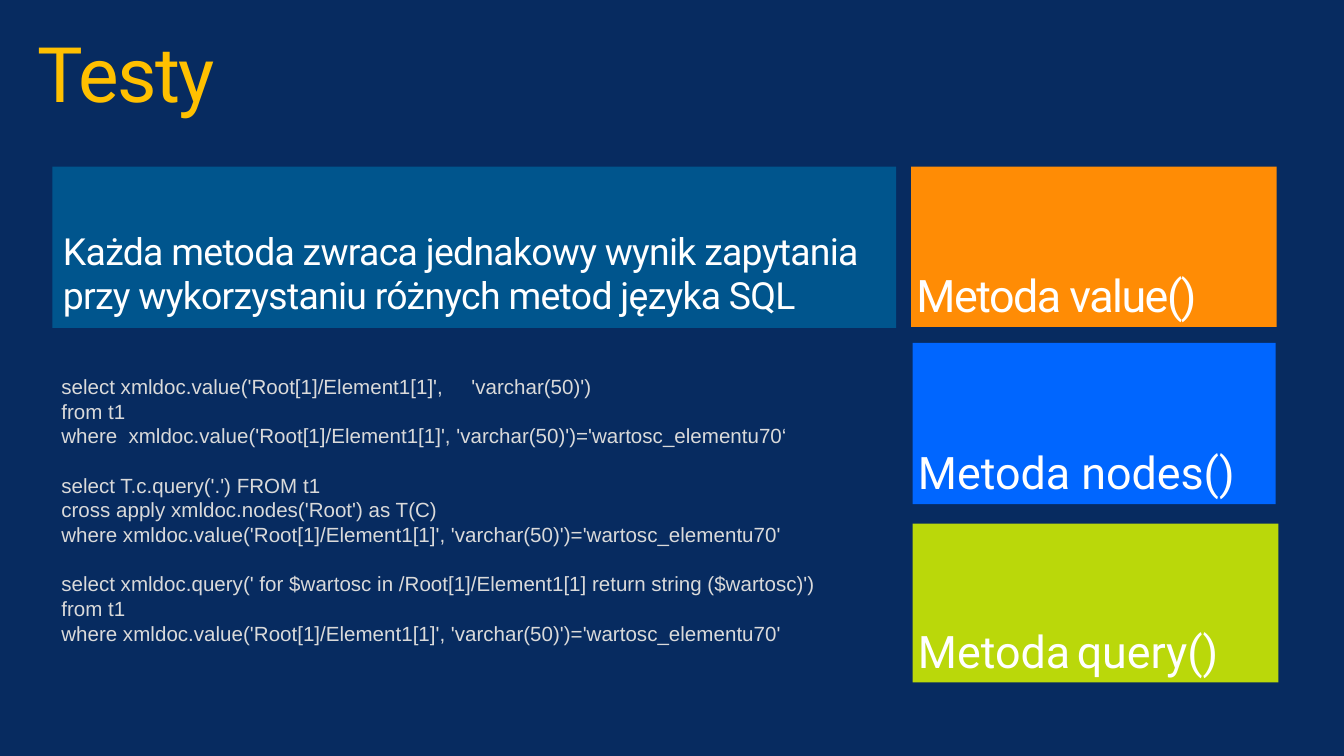
from pptx import Presentation
from pptx.dml.color import RGBColor
from pptx.enum.shapes import MSO_SHAPE
from pptx.enum.text import MSO_ANCHOR, PP_ALIGN
from pptx.oxml.ns import qn
from pptx.util import Cm, Pt
from lxml.etree import SubElement

COLORS = {
    "background": "072B60", "title": "FFC000", "text": "FFFFFF", "code": "DADADA",
    "summary": "00558D", "value": "FF8C05", "nodes": "0066FF", "query": "BAD80A",
}
TITLE = "Testy"
SUMMARY = "Każda metoda zwraca jednakowy wynik zapytania przy wykorzystaniu różnych metod języka SQL"
CONDITION = "xmldoc.value('Root[1]/Element1[1]', 'varchar(50)')='wartosc_elementu70"
QUERIES = [
    ["select xmldoc.value('Root[1]/Element1[1]',\t'varchar(50)')",
     "from t1",
     f"where\t{CONDITION}‘"],
    ["select T.c.query('.') FROM t1",
     "cross apply xmldoc.nodes('Root') as T(C)",
     f"where {CONDITION}'"],
    ["select xmldoc.query(' for $wartosc in /Root[1]/Element1[1] return string ($wartosc)')",
     "from t1",
     f"where {CONDITION}'"],
]
CODE_TABS = [[7.75], [], [1.27]]
SMALL, LARGE = 0.1, 0.2
TILES = [
    ("summary", (0.99, 3.15, 15.95, 3.05), (LARGE, SMALL, SMALL, LARGE), [(SUMMARY, 20)], -0.4),
    ("value", (17.22, 3.15, 6.91, 3.03), (SMALL,) * 4, [("Metoda value()", 24)], -0.8),
    ("nodes", (17.25, 6.48, 6.86, 3.05), (SMALL,) * 4, [("Metoda nodes()", 24)], 0),
    ("query", (17.25, 9.9, 6.91, 3), (SMALL,) * 4,
     [("Metoda", 24), (" ", 14), ("query()", 24)], 0),
]
CODE_PITCH = 13.2


def color(name):
    return RGBColor.from_string(COLORS[name])


def add_run(paragraph, words, size, tint, face="Roboto", spacing=0):
    run = paragraph.add_run()
    run.text = words
    run.font.size = Pt(size)
    run.font.name = face
    run.font.color.rgb = color(tint)
    if spacing:
        run.font._element.set("spc", str(round(spacing * 100)))


def set_frame(frame, insets, anchor):
    frame.word_wrap = True
    frame.vertical_anchor = anchor
    (frame.margin_left, frame.margin_top,
     frame.margin_right, frame.margin_bottom) = map(Cm, insets)


def add_tabs(paragraph, stops):
    tab_list = SubElement(paragraph._p.get_or_add_pPr(), qn("a:tabLst"))
    for stop in stops:
        SubElement(tab_list, qn("a:tab"), pos=str(Cm(stop)), algn="l")


def add_title(slide):
    title = slide.shapes.title
    title.left, title.top, title.width, title.height = map(Cm, (0.46, 0.48, 23.24, 1.57))
    set_frame(title.text_frame, (0.25, 0.2, 0.25, 0.13), MSO_ANCHOR.TOP)
    heading = title.text_frame.paragraphs[0]
    heading.alignment = PP_ALIGN.LEFT
    heading.line_spacing = 0.9
    add_run(heading, TITLE, 41, "title", spacing=-0.8)


def add_tile(slide, fill, place, insets, label, spacing):
    tile = slide.shapes.add_shape(MSO_SHAPE.RECTANGLE, *map(Cm, place))
    tile.shadow.inherit = False
    tile.fill.solid()
    tile.fill.fore_color.rgb = color(fill)
    tile.line.fill.background()
    set_frame(tile.text_frame, insets, MSO_ANCHOR.BOTTOM)
    caption = tile.text_frame.paragraphs[0]
    caption.alignment = PP_ALIGN.LEFT
    for words, size in label:
        add_run(caption, words, size, "text", spacing=spacing)


def add_code(slide):
    frame = slide.shapes.add_textbox(*map(Cm, (0.91, 6.91, 15.93, 6.02))).text_frame
    set_frame(frame, (0.25, 0.13, 0.25, 0.7), MSO_ANCHOR.MIDDLE)
    for query_index, query in enumerate(QUERIES):
        for line_index, words in enumerate(query):
            first = query_index == line_index == 0
            line = frame.paragraphs[0] if first else frame.add_paragraph()
            line.line_spacing = Pt(CODE_PITCH)
            if line_index == 0 and not first:
                line.space_before = Pt(CODE_PITCH)
            if "\t" in words:
                add_tabs(line, CODE_TABS[line_index])
            add_run(line, words, 11, "code", "Arial")


def main():
    """Build the slide comparing three XML query methods."""
    deck = Presentation()
    deck.slide_width, deck.slide_height = Cm(25.4), Cm(14.29)
    slide = deck.slides.add_slide(deck.slide_layouts[5])
    slide.background.fill.solid()
    slide.background.fill.fore_color.rgb = color("background")
    add_title(slide)
    for tile in TILES:
        add_tile(slide, *tile)
    add_code(slide)
    deck.save("out.pptx")


if __name__ == "__main__":
    main()
